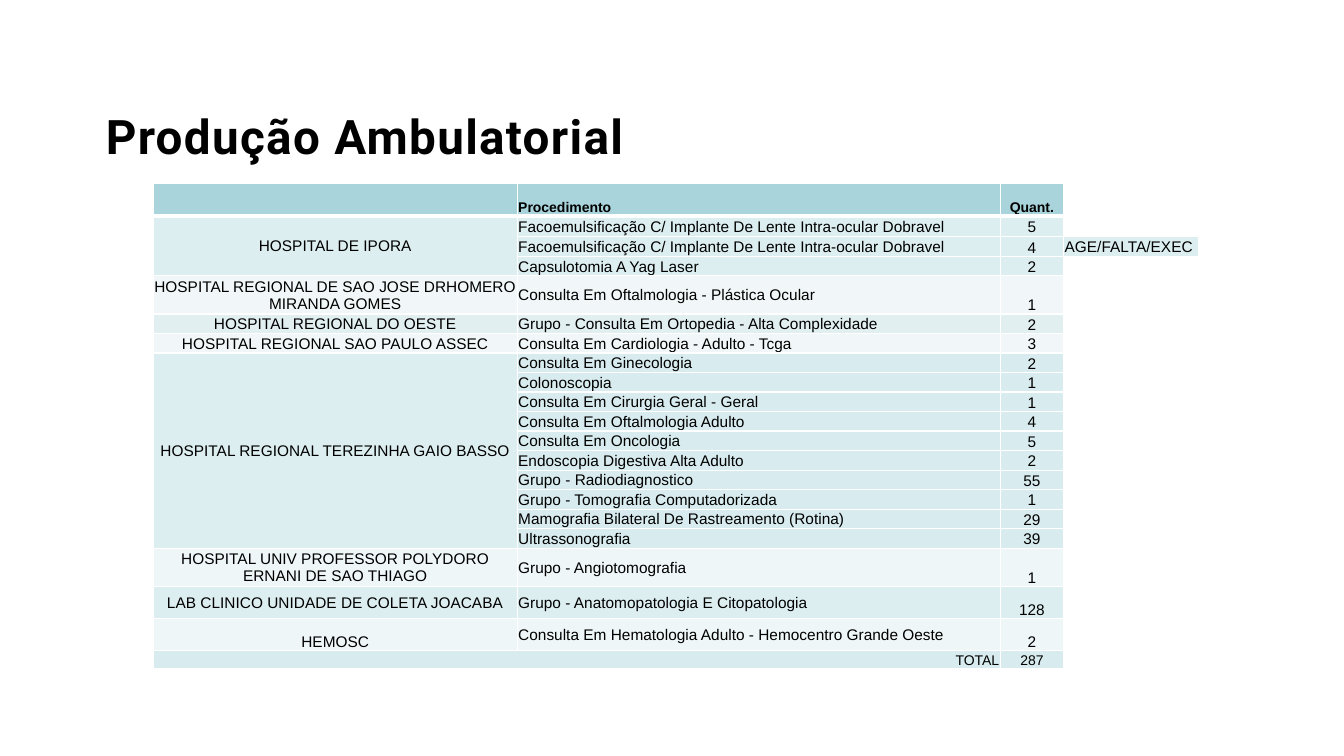
from lxml.etree import SubElement
from pptx import Presentation
from pptx.dml.color import RGBColor
from pptx.enum.text import MSO_ANCHOR as Anchor, PP_ALIGN as Align
from pptx.oxml.ns import qn
from pptx.util import Inches, Pt

BLACK = RGBColor(0x00, 0x00, 0x00)
WHITE = RGBColor(0xFF, 0xFF, 0xFF)
HEADER = RGBColor(0xA9, 0xD4, 0xDB)
TEAL = RGBColor(0xD8, 0xEB, 0xEE)
LIGHT_TEAL = RGBColor(0xDD, 0xEE, 0xF1)
SOFT_TEAL = RGBColor(0xE2, 0xEF, 0xF1)
MIST = RGBColor(0xEE, 0xF6, 0xF8)
PALE = RGBColor(0xF1, 0xF7, 0xF8)

COLUMN_WIDTHS = (3.61, 4.79, 0.63, 1.34)
TALL, SHORT = 0.32, 0.16
ROW_HEIGHTS = (TALL, 0.21, 0.15, SHORT, TALL, *[SHORT] * 12, *[TALL] * 3, 0.11)

HOSPITALS = [
    ("HOSPITAL DE IPORA", LIGHT_TEAL, LIGHT_TEAL, [
        ("Facoemulsificação C/ Implante De Lente Intra-ocular Dobravel", 5),
        ("Facoemulsificação C/ Implante De Lente Intra-ocular Dobravel", 4),
        ("Capsulotomia A Yag Laser", 2)]),
    ("HOSPITAL REGIONAL DE SAO JOSE DRHOMERO MIRANDA GOMES", PALE, PALE, [
        ("Consulta Em Oftalmologia - Plástica Ocular", 1)]),
    ("HOSPITAL REGIONAL DO OESTE", SOFT_TEAL, SOFT_TEAL, [
        ("Grupo - Consulta Em Ortopedia - Alta Complexidade", 2)]),
    ("HOSPITAL REGIONAL SAO PAULO ASSEC", PALE, PALE, [
        ("Consulta Em Cardiologia - Adulto - Tcga", 3)]),
    ("HOSPITAL REGIONAL TEREZINHA GAIO BASSO", LIGHT_TEAL, TEAL, [
        ("Consulta Em Ginecologia", 2),
        ("Colonoscopia", 1),
        ("Consulta Em Cirurgia Geral - Geral", 1),
        ("Consulta Em Oftalmologia Adulto", 4),
        ("Consulta Em Oncologia", 5),
        ("Endoscopia Digestiva Alta Adulto", 2),
        ("Grupo - Radiodiagnostico", 55),
        ("Grupo - Tomografia Computadorizada", 1),
        ("Mamografia Bilateral De Rastreamento (Rotina)", 29),
        ("Ultrassonografia", 39)]),
    ("HOSPITAL UNIV PROFESSOR POLYDORO ERNANI DE SAO THIAGO", MIST, MIST, [
        ("Grupo - Angiotomografia", 1)]),
    ("LAB CLINICO UNIDADE DE COLETA JOACABA", LIGHT_TEAL, LIGHT_TEAL, [
        ("Grupo - Anatomopatologia E Citopatologia", 128)]),
    ("HEMOSC", MIST, MIST, [
        ("Consulta Em Hematologia Adulto - Hemocentro Grande Oeste", 2)]),
]


def style_span(span, font_name, size, bold):
    span.font.name = font_name
    span.font.size = Pt(size)
    span.font.bold = bold
    span.font.color.rgb = BLACK


def add_title(page, text):
    box = page.shapes.add_textbox(Inches(1.05), Inches(0.96), Inches(5.4), Inches(0.67))
    frame = box.text_frame
    frame.word_wrap = True
    frame.vertical_anchor = Anchor.BOTTOM
    frame.margin_left = frame.margin_right = frame.margin_top = frame.margin_bottom = 0
    frame.text = text
    span = frame.paragraphs[0].runs[0]
    style_span(span, "Roboto", 34, True)
    span.font._element.set("spc", "100")


def add_borders(cell, bottom_width):
    properties = cell._tc.get_or_add_tcPr()
    for side, width in (("L", 1), ("R", 1), ("T", 1), ("B", bottom_width)):
        line = SubElement(properties, qn(f"a:ln{side}"), w=str(Pt(width)))
        SubElement(SubElement(line, qn("a:solidFill")), qn("a:srgbClr"), val=str(WHITE))


def prepare_cell(cell, bottom_width):
    add_borders(cell, bottom_width)
    cell.margin_left = cell.margin_right = cell.margin_top = Inches(0.01)
    cell.margin_bottom = 0
    cell.fill.solid()
    cell.fill.fore_color.rgb = WHITE
    SubElement(cell.text_frame.paragraphs[0]._p, qn("a:endParaRPr"), sz="1000")


def fill_cell(cell, text, color, align=Align.LEFT, anchor=Anchor.MIDDLE, size=11, bold=False):
    cell.fill.fore_color.rgb = color
    cell.vertical_anchor = anchor
    para = cell.text_frame.paragraphs[0]
    para.text = text
    para.alignment = align
    for span in para.runs:
        style_span(span, "Arial", size, bold)


def add_production_table(page):
    frame = page.shapes.add_table(
        len(ROW_HEIGHTS), len(COLUMN_WIDTHS), Inches(1.52), Inches(1.82),
        Inches(sum(COLUMN_WIDTHS)), Inches(sum(ROW_HEIGHTS)))
    table = frame.table
    table.horz_banding = False
    for column, width in zip(table.columns, COLUMN_WIDTHS):
        column.width = Inches(width)
    for index, (row, height) in enumerate(zip(table.rows, ROW_HEIGHTS)):
        row.height = Inches(height)
        for cell in row.cells:
            prepare_cell(cell, 3 if index == 0 else 1)
    return table


def fill_header(table):
    fill_cell(table.cell(0, 0), "", HEADER)
    fill_cell(table.cell(0, 1), "Procedimento", HEADER, Align.LEFT, Anchor.BOTTOM, 10, True)
    fill_cell(table.cell(0, 2), "Quant.", HEADER, Align.CENTER, Anchor.BOTTOM, 10, True)


def fill_hospitals(table):
    row = 1
    for hospital, hospital_color, color, procedures in HOSPITALS:
        name_cell = table.cell(row, 0)
        if len(procedures) > 1:
            name_cell.merge(table.cell(row + len(procedures) - 1, 0))
        name_anchor = Anchor.BOTTOM if hospital == "HEMOSC" else Anchor.MIDDLE
        fill_cell(name_cell, hospital, hospital_color, Align.CENTER, name_anchor)
        for procedure, quantity in procedures:
            quantity_anchor = Anchor.MIDDLE if row == 1 else Anchor.BOTTOM
            fill_cell(table.cell(row, 1), procedure, color)
            fill_cell(table.cell(row, 2), str(quantity), color, Align.CENTER, quantity_anchor)
            row += 1
    fill_cell(table.cell(2, 3), "AGE/FALTA/EXEC", LIGHT_TEAL)


def fill_total(table):
    last = len(ROW_HEIGHTS) - 1
    total = sum(quantity for *_, procedures in HOSPITALS for _, quantity in procedures)
    table.cell(last, 0).merge(table.cell(last, 1))
    fill_cell(table.cell(last, 0), "TOTAL", TEAL, Align.RIGHT, Anchor.BOTTOM, 10)
    fill_cell(table.cell(last, 2), str(total), TEAL, Align.CENTER, Anchor.BOTTOM, 10)


def main():
    deck = Presentation()
    deck.slide_width = Inches(13.33)
    deck.slide_height = Inches(7.5)
    page = deck.slides.add_slide(deck.slide_layouts[6])
    add_title(page, "Produção Ambulatorial")
    table = add_production_table(page)
    fill_header(table)
    fill_hospitals(table)
    fill_total(table)
    deck.save("out.pptx")


if __name__ == "__main__":
    main()
